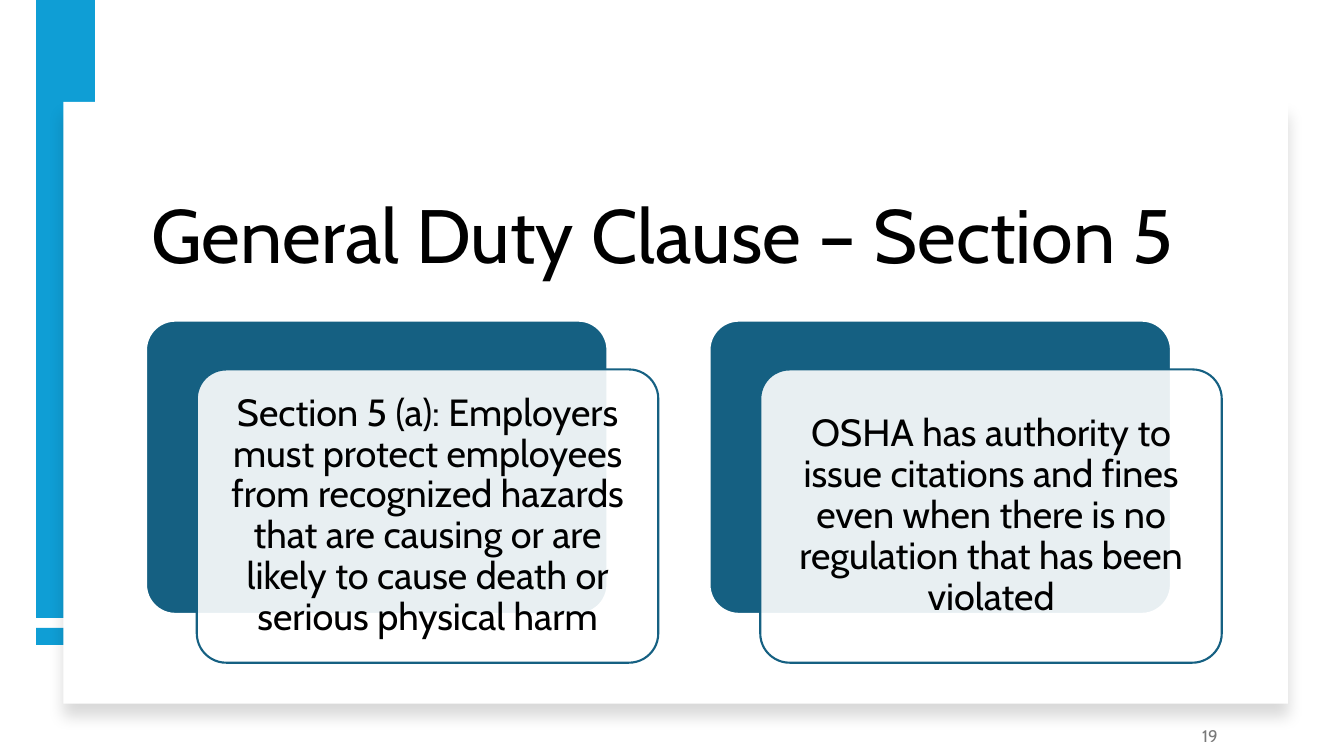
from lxml import etree
from pptx import Presentation
from pptx.dml.color import RGBColor
from pptx.enum.shapes import MSO_SHAPE as Kind
from pptx.enum.text import MSO_ANCHOR as Anchor, MSO_AUTO_SIZE as Fit, PP_ALIGN as Align
from pptx.oxml import parse_xml
from pptx.oxml.ns import nsdecls, qn
from pptx.util import Cm, Pt

HUES = {"sky": "0F9ED5", "teal": "156082", "white": "FFFFFF",
        "black": "000000", "gray": "797979"}
FONT = "Cabin"
CLAUSES = [
    "Section 5 (a): Employers must protect employees from recognized hazards "
    "that are causing or are likely to cause death or serious physical harm",
    "OSHA has authority to issue citations and fines even when there is no "
    "regulation that has been violated",
]


def hue(name):
    return RGBColor.from_string(HUES[name])


def write(shape, text, size, color="black", align=Align.LEFT, anchor=Anchor.MIDDLE,
          space=1.0, after=0, pad=None):
    frame = shape.text_frame
    frame.text = text
    frame.word_wrap = True
    frame.auto_size = Fit.NONE
    frame.vertical_anchor = anchor
    if pad is not None:
        frame.margin_left = frame.margin_right = Cm(pad)
        frame.margin_top = frame.margin_bottom = Cm(pad)
    para = frame.paragraphs[0]
    para.alignment = align
    para.line_spacing = space
    para.space_after = Pt(after)
    font = para.runs[0].font
    font.name, font.size = FONT, Pt(size)
    font.color.rgb = hue(color)


def label(slide, box, text, size, **style):
    area = slide.shapes.add_textbox(*map(Cm, box))
    write(area, text, size, **style)


def block(slide, box, fill, line=None, kind=Kind.RECTANGLE, alpha=None):
    shape = slide.shapes.add_shape(kind, *map(Cm, box))
    shape.shadow.inherit = False
    shape.fill.solid()
    shape.fill.fore_color.rgb = hue(fill)
    if alpha:
        tint = shape.fill._xPr.find(qn("a:solidFill"))[0]
        etree.SubElement(tint, qn("a:alpha")).set("val", str(alpha * 1000))
    if line:
        shape.line.color.rgb = hue(line)
        shape.line.width = Pt(1.5)
    else:
        shape.line.fill.background()
    if kind == Kind.ROUNDED_RECTANGLE:
        shape.adjustments[0] = 0.1
    return shape


def stripe(slide, box):
    left, top, wide, high = box
    foot, gap = 0.43, 0.25
    block(slide, (left, top + high - foot, wide, foot), "sky")
    block(slide, (left, top, wide, high - foot - gap), "sky")


def card(slide, box):
    sheet = block(slide, box, "white")
    glow = parse_xml(
        f'<a:outerShdw {nsdecls("a")} blurRad="{Pt(11)}" dist="{Pt(10)}" '
        'dir="5400000" algn="t" rotWithShape="0"><a:srgbClr val="'
        f'{HUES["black"]}"><a:alpha val="15000"/></a:srgbClr></a:outerShdw>')
    sheet.element.spPr.find(qn("a:effectLst")).append(glow)


def head(slide, box, text):
    title = slide.shapes.title
    title.left, title.top, title.width, title.height = map(Cm, box)
    write(title, text, 54, anchor=Anchor.BOTTOM, space=0.9)
    tree = title.element.getparent()
    tree.append(title.element)


def panel(slide, box, text):
    left, top, wide, high = box
    right, down, inset = 1.28, 1.23, 0.21
    front = (left + right, top + down, wide, high)
    inner = (front[0] + inset, front[1] + inset, wide - 2 * inset, high - 2 * inset)
    block(slide, box, "teal", "white", Kind.ROUNDED_RECTANGLE)
    block(slide, front, "white", "teal", Kind.ROUNDED_RECTANGLE, alpha=90)
    label(slide, inner, text, 27, align=Align.CENTER, space=0.9, after=9, pad=0.28)


def panels(slide, box, texts):
    left, top, wide, high = box
    step = 14.2
    for spot, text in enumerate(texts):
        panel(slide, (left + spot * step, top, wide, high), text)


def main():
    deck = Presentation()
    deck.slide_width, deck.slide_height = Cm(33.87), Cm(19.05)
    slide = deck.slides.add_slide(deck.slide_layouts[5])
    stripe(slide, (0.91, 0, 1.48, 16.25))
    card(slide, (1.6, 2.57, 30.86, 15.16))
    head(slide, (3.56, 3.43, 27.36, 3.76), "General Duty Clause – Section 5")
    label(slide, (23.93, 18.03, 7.01, 1.02), "19", 12, color="gray",
          align=Align.RIGHT, after=6)
    panels(slide, (3.68, 8.08, 11.63, 7.39), CLAUSES)
    deck.save("out.pptx")


if __name__ == "__main__":
    main()
